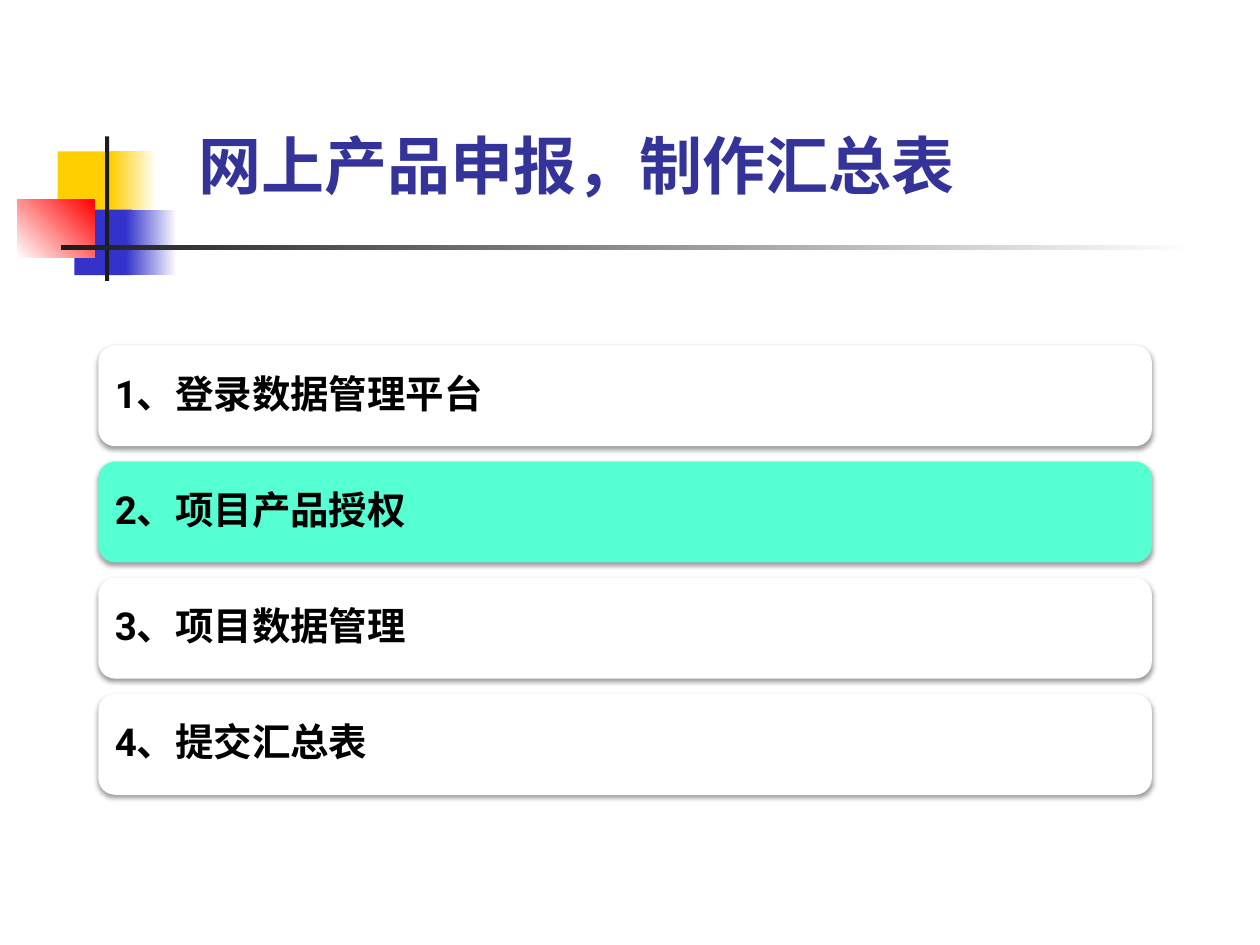
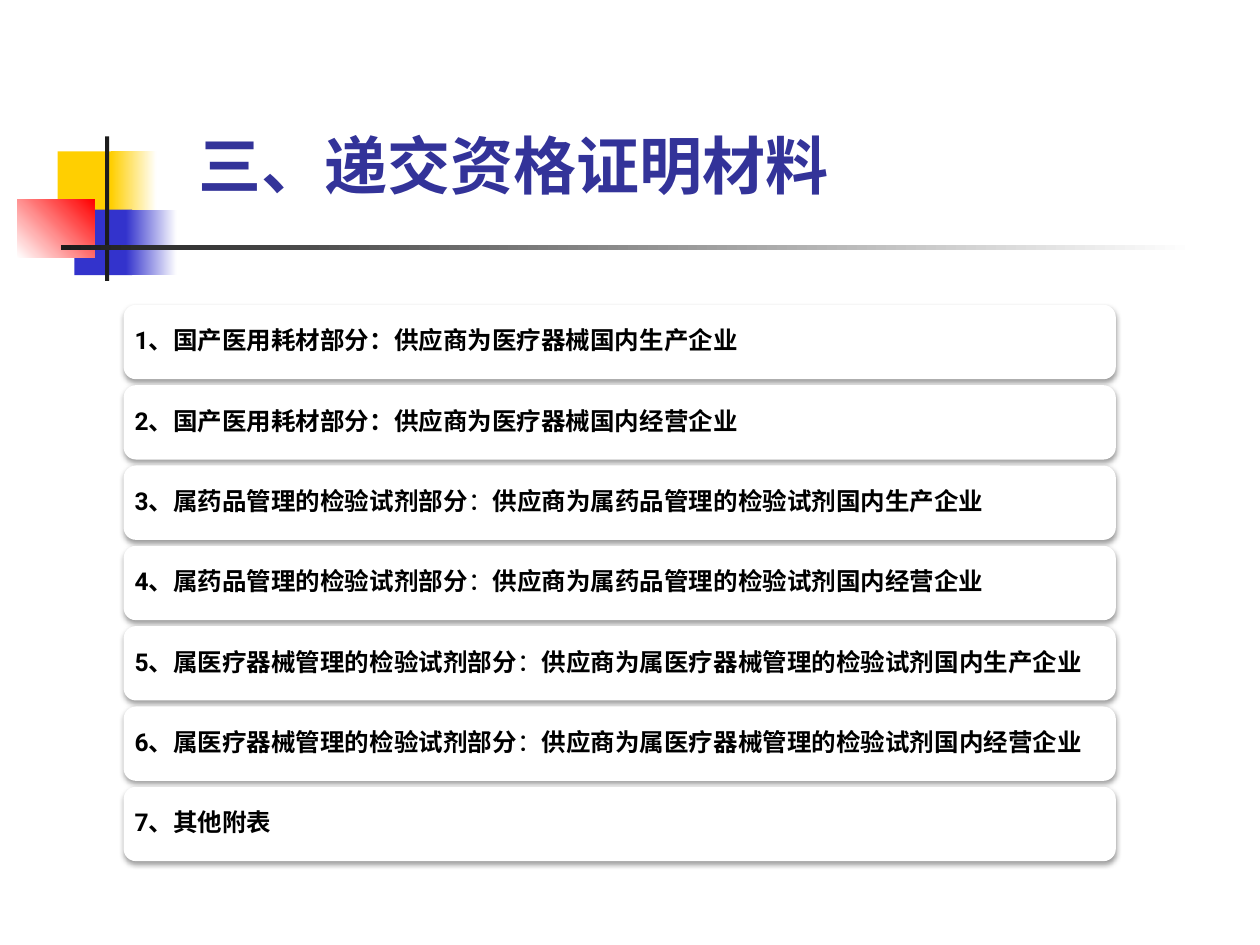
from dataclasses import dataclass

from lxml import etree
from pptx import Presentation
from pptx.dml.color import RGBColor
from pptx.enum import shapes, text
from pptx.oxml import ns
from pptx.util import Pt


@dataclass(frozen=True)
class Theme:
    gold: str = "FFCF01"
    blue: str = "3333CC"
    red: str = "FF0000"
    dark: str = "1C1C1C"
    white: str = "FFFFFF"
    mint: str = "56FFD2"
    navy: str = "333399"
    ink: str = "000000"
    latin: str = "Roboto"
    asian: str = "Noto Sans CJK SC"
    title: int = 36
    large: int = 22
    small: int = 14


T = Theme()
KIND = shapes.MSO_SHAPE

# Corner motif: left, top, width, height, colours (two make a gradient), angle
MOTIF = [
    (33, 86.5, 34.5, 37.5, (T.gold,), 0),
    (63.5, 86.5, 26, 37.5, (T.gold, T.white), 0),
    (42.5, 119.8, 33, 37.5, (T.blue,), 0),
    (72, 119.8, 29, 37.5, (T.blue, T.white), 0),
    (10, 113.8, 44, 33.5, (T.white, T.red), 45),
    (60, 78, 2.4, 82.6, (T.dark,), 0),
    (34.8, 140.2, 648, 2.4, (T.dark, T.white), 0),
]

STEPS = ["1、登录数据管理平台", "2、项目产品授权", "3、项目数据管理", "4、提交汇总表"]

# A tuple holds a part, and its supplier text after a light colon
PROOFS = [
    "1、国产医用耗材部分：供应商为医疗器械国内生产企业",
    "2、国产医用耗材部分：供应商为医疗器械国内经营企业",
    ("3、属药品管理的检验试剂部分", "供应商为属药品管理的检验试剂国内生产企业"),
    ("4、属药品管理的检验试剂部分", "供应商为属药品管理的检验试剂国内经营企业"),
    ("5、属医疗器械管理的检验试剂部分", "供应商为属医疗器械管理的检验试剂国内生产企业"),
    ("6、属医疗器械管理的检验试剂部分", "供应商为属医疗器械管理的检验试剂国内经营企业"),
    "7、其他附表",
]


def rgb(code):
    return RGBColor.from_string(code)


def style(para, name, size, color):
    """Set the font that all runs of a paragraph share."""
    font = para.font
    font.size, font.bold, font.name = Pt(size), True, name
    font.color.rgb = rgb(color)
    etree.SubElement(font._rPr, ns.qn("a:ea"), typeface=T.asian)


def frame(shape, inset):
    """Prepare a wrapped, vertically centred text frame."""
    body = shape.text_frame
    body.word_wrap = True
    body.vertical_anchor = text.MSO_ANCHOR.MIDDLE
    body.margin_left = body.margin_right = Pt(inset)
    body.margin_top = body.margin_bottom = Pt(inset)
    return body.paragraphs[0]


def block(slide, kind, box, colors, angle=0):
    """Add an unlined shape with a solid or two-colour fill."""
    shape = slide.shapes.add_shape(kind, *map(Pt, box))
    shape.shadow.inherit = False
    shape.line.fill.background()
    if len(colors) == 1:
        shape.fill.solid()
        shape.fill.fore_color.rgb = rgb(colors[0])
    else:
        shape.fill.gradient()
        shape.fill.gradient_angle = angle
        for stop, color in zip(shape.fill.gradient_stops, colors):
            stop.color.rgb = rgb(color)
    return shape


def shade(shape):
    """Add a soft shadow below a shape."""
    effects = shape._element.spPr.find(ns.qn("a:effectLst"))
    outer = etree.SubElement(
        effects, ns.qn("a:outerShdw"), blurRad=str(Pt(3.1)), dist=str(Pt(1.6)),
        dir="5400000", algn="t", rotWithShape="0")
    color = etree.SubElement(outer, ns.qn("a:srgbClr"), val=T.ink)
    etree.SubElement(color, ns.qn("a:alpha"), val="38000")


def card(slide, box, words, size, inset, color):
    shape = block(slide, KIND.ROUNDED_RECTANGLE, box, (color,))
    shade(shape)
    para = frame(shape, inset)
    para.alignment = text.PP_ALIGN.LEFT
    para.line_spacing = 0.9
    para.space_after = Pt(0.35 * size)
    style(para, T.latin, size, T.ink)
    if isinstance(words, str):
        para.add_run().text = words
    else:
        part, firm = words
        for piece in (part, "：", firm):
            run = para.add_run()
            run.text = piece
            run.font.bold = piece != "："


def stack(slide, items, box, step, size, inset, mark=None):
    """Stack equal cards; mark is the index of the highlighted one."""
    left, top, width, height = box
    for i, words in enumerate(items):
        color = T.mint if i == mark else T.white
        spot = (left, top + i * step, width, height)
        card(slide, spot, words, size, inset, color)


def page(deck, title):
    """Add a slide with the shared motif and title."""
    slide = deck.slides.add_slide(deck.slide_layouts[6])
    for *box, colors, angle in MOTIF:
        block(slide, KIND.RECTANGLE, box, colors, angle)
    head = slide.shapes.add_textbox(*map(Pt, (106.5, 49, 579.5, 90)))
    para = frame(head, 7.2)
    para.add_run().text = title
    style(para, T.asian, T.title, T.navy)
    return slide


def main():
    deck = Presentation()
    deck.slide_width, deck.slide_height = Pt(720), Pt(540)

    # Online filing steps
    slide = page(deck, "网上产品申报，制作汇总表")
    stack(slide, STEPS, (56.2, 197.4, 602, 57.6), 66.4, T.large, 6.6, mark=1)

    # Proof documents
    slide = page(deck, "三、递交资格证明材料")
    stack(slide, PROOFS, (70.6, 174.2, 567, 42.5), 45.9, T.small, 4.2)

    deck.save("out.pptx")


if __name__ == "__main__":
    main()
